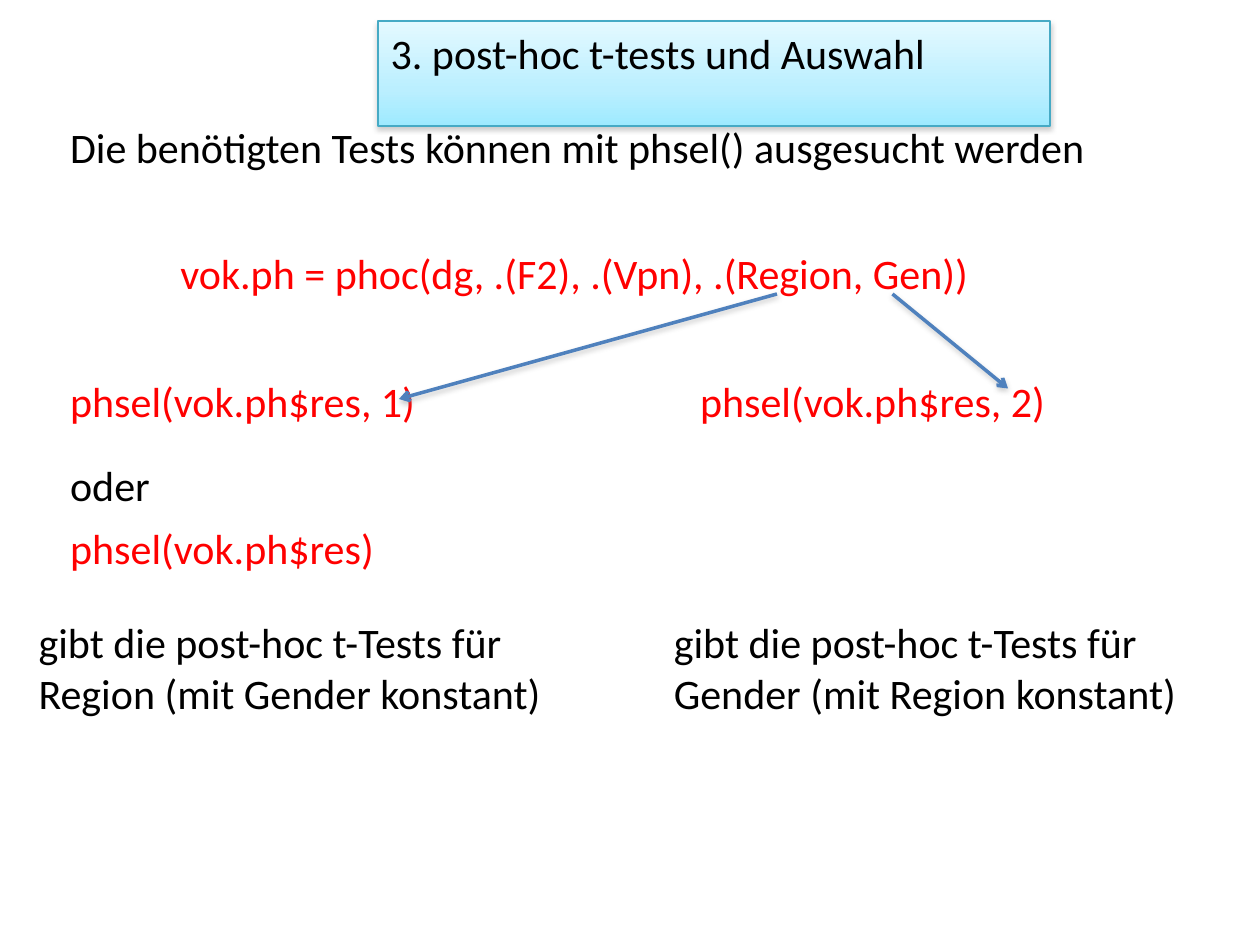
from copy import deepcopy

from lxml.etree import SubElement
from pptx import Presentation
from pptx.dml.color import RGBColor
from pptx.enum.shapes import MSO_CONNECTOR
from pptx.enum.text import MSO_ANCHOR, MSO_AUTO_SIZE, PP_ALIGN
from pptx.oxml.ns import qn
from pptx.util import Pt

BLACK = RGBColor(0x00, 0x00, 0x00)
RED = RGBColor(0xFF, 0x00, 0x00)
ARROW_BLUE = RGBColor(0x4F, 0x81, 0xBD)
TITLE_EDGE = RGBColor(0x46, 0xAA, 0xC5)
TITLE_TOP = RGBColor(0xE4, 0xF9, 0xFF)
TITLE_MIDDLE = RGBColor(0xBB, 0xEF, 0xFF)
TITLE_BOTTOM = RGBColor(0x9E, 0xEA, 0xFF)
SHADOW_GREY = RGBColor(0x80, 0x80, 0x80)

LEFT_MARGIN = 33
LINE_HEIGHT = 36.5
CALL_TOP = 211
RESULT_TOP = 349
RESULT_WIDTH = 330


def write_text(shape, text, color):
    """Fill a shape with one left-aligned 24 point paragraph."""
    frame = shape.text_frame
    frame.word_wrap = True
    frame.auto_size = MSO_AUTO_SIZE.SHAPE_TO_FIT_TEXT
    frame.vertical_anchor = MSO_ANCHOR.TOP
    frame.text = text
    paragraph = frame.paragraphs[0]
    paragraph.alignment = PP_ALIGN.LEFT
    paragraph.font.name = "Calibri"
    paragraph.font.size = Pt(24)
    paragraph.font.color.rgb = color


def add_shadow(shape):
    """Give a shape a soft grey shadow straight below it."""
    effects = SubElement(shape._element.spPr, qn("a:effectLst"))
    shadow = SubElement(effects, qn("a:outerShdw"), blurRad=str(Pt(3.1)),
                        dist=str(Pt(1.6)), dir="5400000", rotWithShape="0")
    tone = SubElement(shadow, qn("a:srgbClr"), val=str(SHADOW_GREY))
    SubElement(tone, qn("a:alpha"), val="38000")


def format_title(title, text):
    """Place the title and give it a three-stop gradient."""
    title.left, title.top, title.width, title.height = (
        Pt(216), Pt(12), Pt(384), Pt(LINE_HEIGHT))
    write_text(title, text, BLACK)
    title.fill.gradient()
    title.fill.gradient_angle = 270
    first_stop = title.fill.gradient_stops[0]._gs
    first_stop.addnext(deepcopy(first_stop))
    colors = (TITLE_TOP, TITLE_MIDDLE, TITLE_BOTTOM)
    for stop, position, color in zip(title.fill.gradient_stops, (0, 0.65, 1), colors):
        stop.position = position
        stop.color.rgb = color
    title.line.color.rgb = TITLE_EDGE
    title.line.width = Pt(0.75)
    add_shadow(title)


def add_statement(slide, text, left, top, width, color=BLACK, height=LINE_HEIGHT):
    """Add a text box holding one statement."""
    box = slide.shapes.add_textbox(Pt(left), Pt(top), Pt(width), Pt(height))
    write_text(box, text, color)


def add_arrow(slide, start, end):
    """Add a shadowed arrow from a factor to its call."""
    arrow = slide.shapes.add_connector(
        MSO_CONNECTOR.STRAIGHT, *(Pt(value) for value in start + end))
    arrow.line.color.rgb = ARROW_BLUE
    arrow.line.width = Pt(2)
    SubElement(arrow.line._get_or_add_ln(), qn("a:tailEnd"), type="arrow")
    add_shadow(arrow)


def main():
    """Build the slide on selecting post-hoc tests."""
    presentation = Presentation()
    presentation.slide_width, presentation.slide_height = Pt(720), Pt(540)
    slide = presentation.slides.add_slide(presentation.slide_layouts[5])

    format_title(slide.shapes.title, "3. post-hoc t-tests und Auswahl")
    add_statement(slide, "Die benötigten Tests können mit phsel() ausgesucht werden",
                  LEFT_MARGIN, 66, 642)
    add_statement(slide, "vok.ph = phoc(dg, .(F2), .(Vpn), .(Region, Gen))",
                  96, 138, 474, RED)
    add_statement(slide, "phsel(vok.ph$res, 1)", LEFT_MARGIN, CALL_TOP, 270, RED)
    add_statement(slide, "phsel(vok.ph$res, 2)", 393, CALL_TOP, 258, RED)
    add_statement(slide, "oder", LEFT_MARGIN, 259, 258)
    add_statement(slide, "phsel(vok.ph$res)", LEFT_MARGIN, 295, 270, RED)

    for left, tested, constant in ((15, "Region", "Gender"), (378, "Gender", "Region")):
        add_statement(slide, f"gibt die post-hoc t-Tests für {tested} (mit {constant} konstant)",
                      left, RESULT_TOP, RESULT_WIDTH, height=65.5)

    add_arrow(slide, (444, 168), (228, 228))
    add_arrow(slide, (510, 168), (576, 222))
    presentation.save("out.pptx")


if __name__ == "__main__":
    main()
